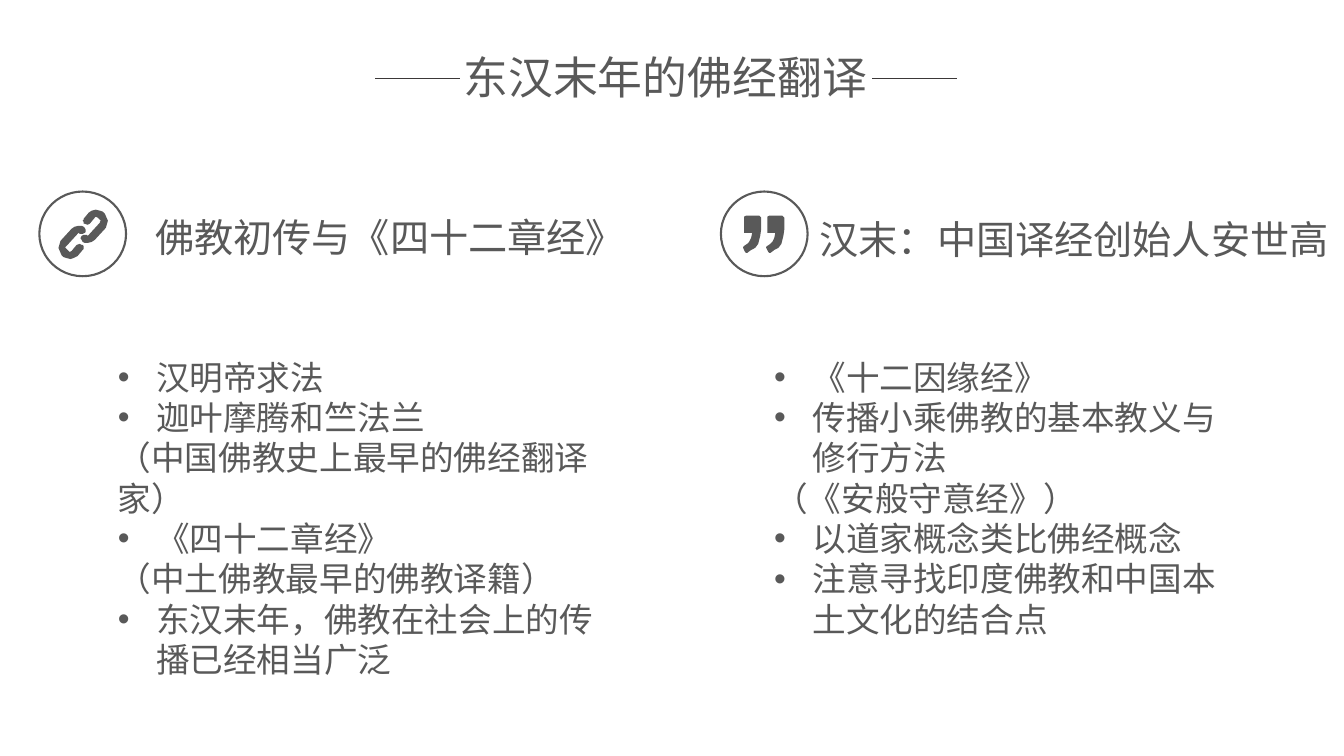
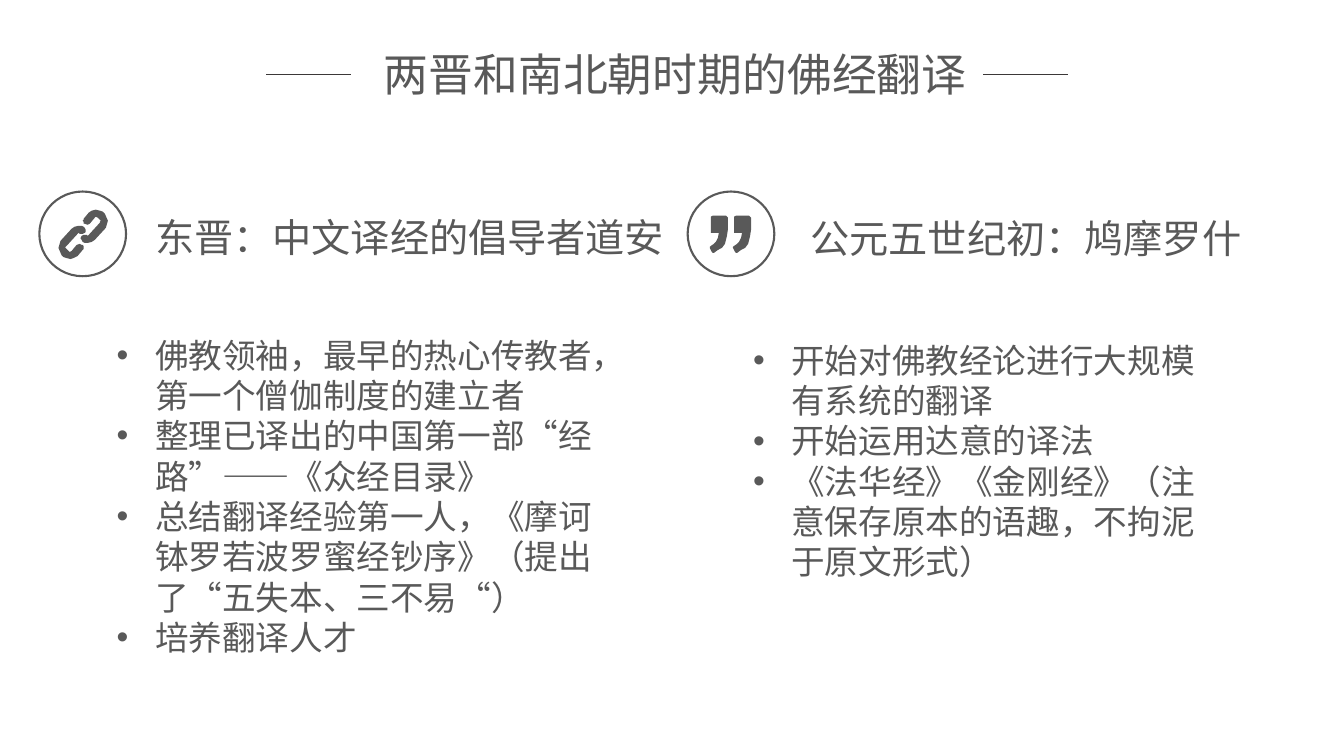
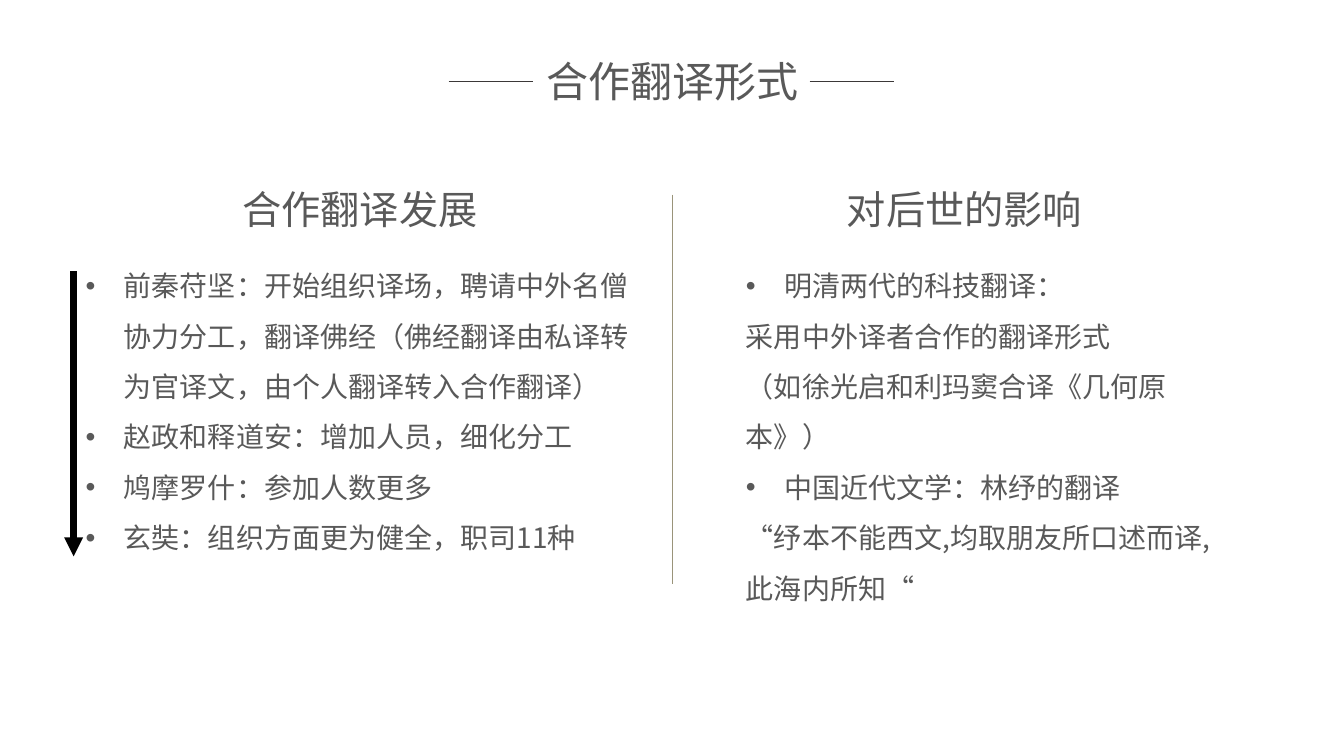
from lxml import etree
from pptx import Presentation
from pptx.dml.color import RGBColor
from pptx.enum.lang import MSO_LANGUAGE_ID
from pptx.enum.shapes import MSO_CONNECTOR, MSO_SHAPE
from pptx.enum.text import MSO_ANCHOR, MSO_AUTO_SIZE, PP_ALIGN
from pptx.oxml.ns import qn
from pptx.util import Inches, Pt

FONT = "Noto Sans CJK SC"
GREY, RULE, DIVIDER, BLACK = "595959", "3B3838", "9A947A", "000000"
RULE_LENGTH = 0.84
HEADING_SIZE, HEADING_HEIGHT = 28, 0.57
INDENT = 0.38
BADGE_TOP, BADGE_W, BADGE_H = 1.9, 0.86, 0.84
LINE_HEIGHT = 1.2
TITLE_ONLY = 5

# Icon outlines in hundredths of an inch from the badge corner:
# pairs are corners, sixes are Bézier curves.
LINK = [
    (39, 34), (41, 34, 43, 34, 44, 35), (45, 36, 46, 37, 46, 38),
    (46, 39, 46, 40, 45, 41), (44, 42, 42, 42, 40, 42),
    (39, 41, 38, 41, 38, 42), (27, 54), (27, 55, 26, 55, 26, 56),
    (26, 56, 27, 57, 27, 57), (29, 59), (30, 60, 31, 60, 32, 59),
    (37, 53), (38, 52, 41, 52, 42, 53), (43, 53),
    (43, 54, 44, 55, 44, 56), (44, 57, 43, 58, 43, 58), (38, 64),
    (36, 66, 33, 67, 31, 67), (28, 67, 26, 66, 24, 65), (22, 63),
    (18, 60, 18, 53, 21, 49), (32, 37), (34, 35, 36, 34, 39, 34),
]
QUOTE = [
    (25, 24), (38, 24), (39, 24, 40, 25, 40, 26), (40, 37),
    (40, 42, 39, 46, 38, 48), (38, 51, 36, 54, 34, 56),
    (32, 58, 29, 59, 26, 61), (25, 61, 24, 61, 24, 60), (22, 56),
    (22, 55, 22, 54, 23, 54), (26, 53, 27, 51, 28, 50),
    (30, 48, 31, 45, 31, 41), (25, 41), (23, 41, 23, 41, 23, 39),
    (23, 26), (23, 25, 23, 24, 25, 24),
]


def color(value):
    return RGBColor.from_string(value)


def flatten(outline, steps=2):
    """Turn corners and Bézier curves into a list of points."""
    points = []
    for segment in outline:
        if len(segment) == 2:
            points.append(segment)
            continue
        controls = [points[-1], segment[:2], segment[2:4], segment[4:]]
        for step in range(1, steps + 1):
            t = step / steps
            weights = [(1 - t) ** 3, 3 * t * (1 - t) ** 2, 3 * t * t * (1 - t), t ** 3]
            points.append(tuple(
                sum(w * point[axis] for w, point in zip(weights, controls))
                for axis in (0, 1)))
    return points


def link_contours():
    """Two chain links, the second turned half round."""
    link = flatten(LINK)
    return [link, [(87 - x, 85 - y) for x, y in link]]


def quote_contours():
    mark = flatten(QUOTE)
    return [mark, [(x + 23, y) for x, y in mark]]


def text_width(text, size):
    """Width of a one-line box: full-width characters plus insets."""
    return len(text) * size / 72 + 0.24


def place(shape, left, top, width, height):
    box = dict(left=left, top=top, width=width, height=height)
    for side, inches in box.items():
        setattr(shape, side, Inches(inches))


def write(frame, lines, size, align=PP_ALIGN.LEFT, spacing=1.0, wrap=True):
    """Fill a frame; lines that start with • become hanging bullets."""
    settings = dict(
        word_wrap=wrap, auto_size=MSO_AUTO_SIZE.SHAPE_TO_FIT_TEXT,
        vertical_anchor=MSO_ANCHOR.TOP,
        margin_left=Inches(0.1), margin_right=Inches(0.1),
        margin_top=Inches(0.05), margin_bottom=Inches(0.05))
    for name, value in settings.items():
        setattr(frame, name, value)
    for number, line in enumerate(lines):
        paragraph = frame.add_paragraph() if number else frame.paragraphs[0]
        paragraph.alignment = align
        paragraph.line_spacing = spacing
        run = paragraph.add_run()
        run.text = line.removeprefix("•")
        font = dict(name=FONT, size=Pt(size), language_id=MSO_LANGUAGE_ID.SIMPLIFIED_CHINESE)
        for name, value in font.items():
            setattr(run.font, name, value)
        run.font.color.rgb = color(GREY)
        latin = run.font._element.find(qn("a:latin"))
        latin.addnext(etree.Element(qn("a:ea"), typeface=FONT))
        if line.startswith("•"):
            add_bullet(paragraph)


def add_bullet(paragraph):
    properties = paragraph._p.get_or_add_pPr()
    properties.set("marL", str(Inches(INDENT)))
    properties.set("indent", str(-Inches(INDENT)))
    etree.SubElement(properties, qn("a:buFont"), typeface="Arial")
    etree.SubElement(properties, qn("a:buChar"), char="•")


def add_text(slide, box, lines, size, **style):
    textbox = slide.shapes.add_textbox(*map(Inches, box))
    write(textbox.text_frame, lines, size, **style)


def add_line(slide, start, end, stroke, weight, arrow=False):
    line = slide.shapes.add_connector(
        MSO_CONNECTOR.STRAIGHT, *map(Inches, (*start, *end)))
    line.line.color.rgb = color(stroke)
    line.line.width = Pt(weight)
    if arrow:
        etree.SubElement(line.line._get_or_add_ln(), qn("a:tailEnd"), type="triangle")
    etree.SubElement(line._element.spPr, qn("a:effectLst"))


def add_outline(slide, left, top, contours):
    """A freeform without a line; contours are in hundredths of an inch."""
    first, *others = contours
    builder = slide.shapes.build_freeform(*first[0], scale=Inches(0.01))
    builder.add_line_segments(first[1:])
    for contour in others:
        builder.move_to(*contour[0])
        builder.add_line_segments(contour[1:])
    outline = builder.convert_to_shape(Inches(left), Inches(top))
    outline.line.fill.background()
    outline.shadow.inherit = False
    return outline


def add_titled_slide(deck, title, center, top, rule_y, rule_lefts, size=32):
    """Start a slide whose title stands between two short rules."""
    slide = deck.slides.add_slide(deck.slide_layouts[TITLE_ONLY])
    width, height = text_width(title, size), size * LINE_HEIGHT / 72 + 0.1
    place(slide.shapes.title, center - width / 2, top, width, height)
    write(slide.shapes.title.text_frame, [title], size, align=PP_ALIGN.CENTER, wrap=False)
    for left in rule_lefts:
        add_line(slide, (left, rule_y), (left + RULE_LENGTH, rule_y), RULE, 0.5)
    return slide


def add_badge(slide, left, contours):
    """A ringed icon."""
    ring = slide.shapes.add_shape(
        MSO_SHAPE.OVAL, *map(Inches, (left, BADGE_TOP, BADGE_W, BADGE_H)))
    ring.rotation = 180
    ring.fill.background()
    ring.line.color.rgb = color(GREY)
    ring.line.width = Pt(1.5)
    ring.shadow.inherit = False
    icon = add_outline(slide, left, BADGE_TOP, contours)
    icon.fill.solid()
    icon.fill.fore_color.rgb = color(GREY)


def add_topic(slide, badge_left, contours, heading, heading_at, list_box, points):
    """A badge with its heading, above a bulleted list."""
    add_badge(slide, badge_left, contours)
    heading_box = (*heading_at, text_width(heading, HEADING_SIZE), HEADING_HEIGHT)
    add_text(slide, heading_box, [heading], HEADING_SIZE, wrap=False)
    add_text(slide, list_box, points, 24)


def add_column(slide, left, width, heading, list_box, points):
    """A centred heading panel above an openly spaced list."""
    right, bottom = width * 100, HEADING_HEIGHT * 100
    panel = add_outline(
        slide, left, 1.79, [[(0, 0), (right, 0), (right, bottom), (0, bottom), (0, 0)]])
    panel.fill.background()
    write(panel.text_frame, [heading], HEADING_SIZE, align=PP_ALIGN.CENTER)
    add_text(slide, list_box, points, 20, spacing=1.5)


def add_eastern_han(deck):
    slide = add_titled_slide(deck, "东汉末年的佛经翻译", 6.6, 0.44, 0.78, (3.72, 8.65))
    add_topic(
        slide, 0.39, link_contours(), "佛教初传与《四十二章经》", (1.44, 2.07),
        (1.07, 3.49, 5.23, 3.33),
        ["•汉明帝求法",
         "•迦叶摩腾和竺法兰",
         "（中国佛教史上最早的佛经翻译家）",
         "•《四十二章经》",
         "（中土佛教最早的佛教译籍）",
         "•东汉末年，佛教在社会上的传播已经相当广泛"])
    add_topic(
        slide, 7.15, quote_contours(), "汉末：中国译经创始人安世高", (8.03, 2.09),
        (7.58, 3.49, 4.81, 3.33),
        ["•《十二因缘经》",
         "•传播小乘佛教的基本教义与修行方法",
         "（《安般守意经》）",
         "•以道家概念类比佛经概念",
         "•注意寻找印度佛教和中国本土文化的结合点"])


def add_jin_and_dynasties(deck):
    slide = add_titled_slide(
        deck, "两晋和南北朝时期的佛经翻译", 6.7, 0.41, 0.74, (2.64, 9.75))
    add_topic(
        slide, 0.39, link_contours(), "东晋：中文译经的倡导者道安", (1.44, 2.07),
        (1.06, 3.27, 5.23, 3.33),
        ["•佛教领袖，最早的热心传教者，第一个僧伽制度的建立者",
         "•整理已译出的中国第一部“经路”——《众经目录》",
         "•总结翻译经验第一人，《摩诃钵罗若波罗蜜经钞序》（提出了“五失本、三不易“）",
         "•培养翻译人才"])
    add_topic(
        slide, 6.82, quote_contours(), "公元五世纪初：鸠摩罗什", (7.94, 2.08),
        (7.37, 3.32, 4.81, 2.52),
        ["•开始对佛教经论进行大规模有系统的翻译",
         "•开始运用达意的译法",
         "•《法华经》《金刚经》（注意保存原本的语趣，不拘泥于原文形式）"])


def add_collaboration(deck):
    slide = add_titled_slide(
        deck, "合作翻译形式", 6.67, 0.5, 0.81, (4.45, 8.03), size=30)
    add_column(
        slide, 0.48, 6.18, "合作翻译发展", (0.75, 2.45, 5.65, 3.07),
        ["•前秦苻坚：开始组织译场，聘请中外名僧协力分工，翻译佛经"
         "（佛经翻译由私译转为官译文，由个人翻译转入合作翻译）",
         "•赵政和释道安：增加人员，细化分工",
         "•鸠摩罗什：参加人数更多",
         "•玄奘：组织方面更为健全，职司11种"])
    add_column(
        slide, 6.82, 5.49, "对后世的影响", (7.3, 2.45, 5.02, 3.07),
        ["•明清两代的科技翻译：",
         "采用中外译者合作的翻译形式",
         "（如徐光启和利玛窦合译《几何原本》）",
         "•中国近代文学：林纾的翻译",
         "“纾本不能西文,均取朋友所口述而译,此海内所知“"])
    add_line(slide, (6.67, 1.93), (6.67, 5.79), DIVIDER, 0.5)
    add_line(slide, (0.73, 2.69), (0.73, 5.52), BLACK, 4.5, arrow=True)


def main():
    deck = Presentation()
    deck.slide_width, deck.slide_height = Inches(13.33), Inches(7.5)
    add_eastern_han(deck)
    add_jin_and_dynasties(deck)
    add_collaboration(deck)
    deck.save("out.pptx")


if __name__ == "__main__":
    main()
